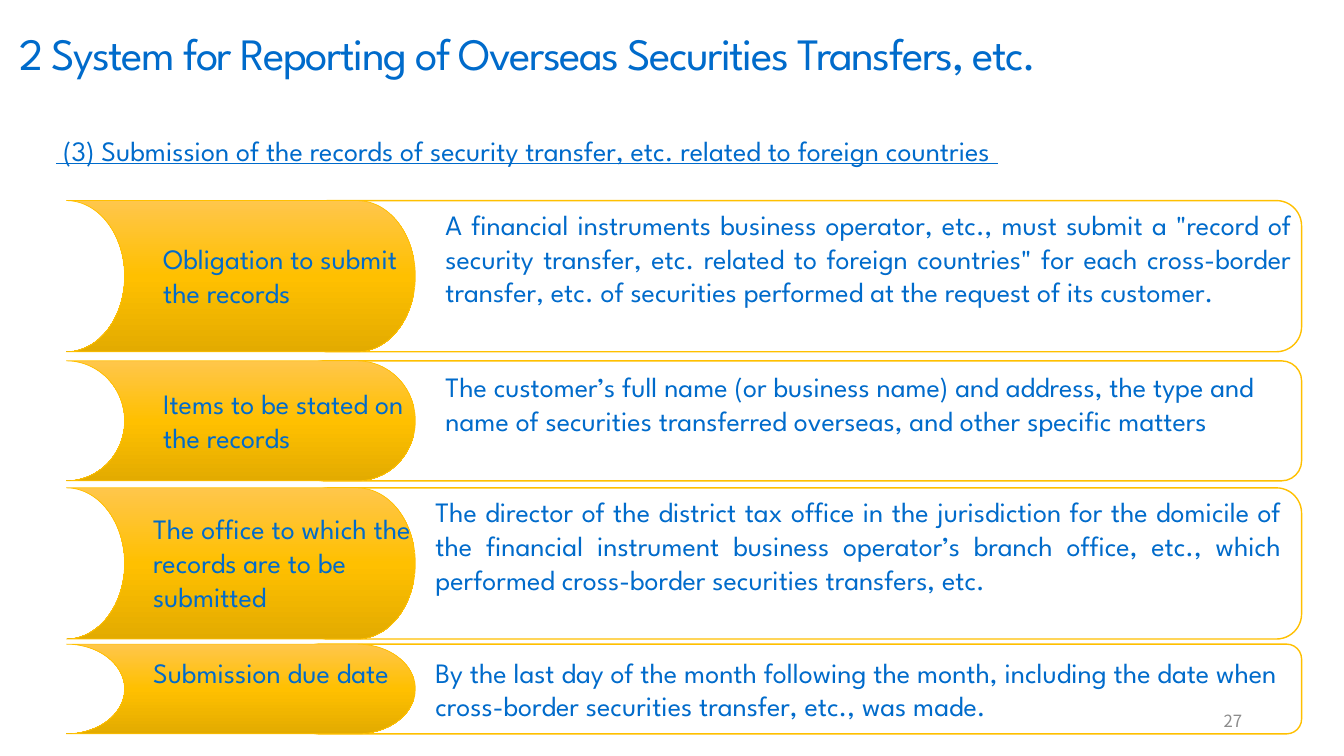
from copy import deepcopy

from pptx import Presentation, util as u
from pptx.dml.color import RGBColor
from pptx.enum import shapes, text

PX = 9144  # EMU per px, 100 px to the inch
COLORS = {"text": "006BCB", "line": "FFC000", "page": "8C8C8C"}
GRADIENT = [(0, "FFC64B"), (0.5, "FFC000"), (1, "E3AB00")]
BODY_FONT = {"name": "League Spartan", "size": u.Pt(20)}
TITLE_FONT = {**BODY_FONT, "size": u.Pt(32)}
PAGE_FONT = {"name": "Noto Sans CJK JP", "size": u.Pt(12)}
LEFT, JUSTIFY, RIGHT = (text.PP_ALIGN.LEFT, text.PP_ALIGN.JUSTIFY,
                        text.PP_ALIGN.RIGHT)


def set_all(target, values):
    for name, value in values.items():
        setattr(target, name, value)


class SlideBuilder:
    def __init__(self, prs, layout):
        self.slide = prs.slides.add_slide(prs.slide_layouts[layout])

    def put_text(self, sp, words, font=BODY_FONT, color="text", align=LEFT,
                 anchor=text.MSO_ANCHOR.TOP, wrap=True):
        tf = sp.text_frame
        set_all(tf, {"word_wrap": wrap, "vertical_anchor": anchor,
                     "auto_size": text.MSO_AUTO_SIZE.NONE})
        p = tf.paragraphs[0]
        p.alignment = align
        r = p.add_run()
        r.text = words
        set_all(r.font, font)
        r.font.color.rgb = RGBColor.from_string(COLORS[color])

    def title(self, box, words):
        sp = self.slide.shapes.title
        set_all(sp, dict(zip(("left", "top", "width", "height"),
                             (n * PX for n in box))))
        self.put_text(sp, words, TITLE_FONT, wrap=False)
        sp.element.xpath(".//a:rPr")[0].set("spc", "-110")

    def text_box(self, box, words, **style):
        sp = self.slide.shapes.add_textbox(*(n * PX for n in box))
        self.put_text(sp, words, **style)

    def shape(self, kind, box, line_width):
        sp = self.slide.shapes.add_shape(kind, *(n * PX for n in box))
        sp.shadow.inherit = False
        sp.fill.background()
        sp.line.color.rgb = RGBColor.from_string(COLORS["line"])
        sp.line.width = u.Pt(line_width)
        return sp

    def frame(self, box):
        self.shape(shapes.MSO_SHAPE.ROUNDED_RECTANGLE, box, 1)

    def tab(self, box):
        sp = self.shape(shapes.MSO_SHAPE.FLOWCHART_STORED_DATA, box, 0.5)
        sp.element.spPr.xfrm.set("flipH", "1")
        sp.fill.gradient()
        sp.fill.gradient_angle = 270
        first = sp.element.spPr.xpath("a:gradFill/a:gsLst/a:gs")[0]
        first.addnext(deepcopy(first))
        for stop, (position, color) in zip(sp.fill.gradient_stops, GRADIENT):
            stop.position = position
            stop.color.rgb = RGBColor.from_string(color)

    def row(self, top, height, indent, label, label_lines, body, body_lines,
            align):
        self.frame((301, top, 990, height))
        self.tab((66, top, 346, height))
        for left, width, words, lines, al in (
                (142, 280, label, label_lines, LEFT),
                (422, 859, body, body_lines, align)):
            box_height = 9 + 34 * lines
            box_top = top + (height - box_height) // 2
            self.text_box((left + indent, box_top, width, box_height),
                          words, align=al)


# top, height, indent, label, label lines, body, body lines, alignment
ROWS = [
    (199, 150, 10, "Obligation to submit the records", 2,
     'A financial instruments business operator, etc., must submit a "record '
     'of security transfer, etc. related to foreign countries" for each '
     "cross-border transfer, etc. of securities performed at the request of "
     "its customer.", 4, JUSTIFY),
    (358, 119, 10, "Items to be stated on the records", 2,
     "The customer’s full name (or business name) and address, the type and "
     "name of securities transferred overseas, and other specific matters",
     3, LEFT),
    (484, 150, 0, "The office to which the records are to be submitted", 3,
     "The director of the district tax office in the jurisdiction for the "
     "domicile of the financial instrument business operator’s branch office, "
     "etc., which performed cross-border securities transfers, etc.",
     4, JUSTIFY),
    (639, 89, 0, "Submission due date", 2,
     "By the last day of the month following the month, including the date "
     "when cross-border securities transfer, etc., was made.", 2, LEFT),
]


def main():
    prs = Presentation()
    prs.slide_width, prs.slide_height = 1333 * PX, 750 * PX
    s = SlideBuilder(prs, 5)

    # Headings
    s.title((9, 20, 1298, 64),
            "2 System for Reporting of Overseas Securities Transfers, etc.")
    s.text_box((46, 128, 1274, 44),
               " (3) Submission of the records of security transfer, etc. "
               "related to foreign countries ",
               font={**BODY_FONT, "underline": True})

    # Rows of labelled requirements
    for row in ROWS:
        s.row(*row)

    # Page number
    s.text_box((942, 695, 300, 40), "27", font=PAGE_FONT, color="page",
               align=RIGHT, anchor=text.MSO_ANCHOR.MIDDLE)

    prs.save("out.pptx")


if __name__ == "__main__":
    main()
